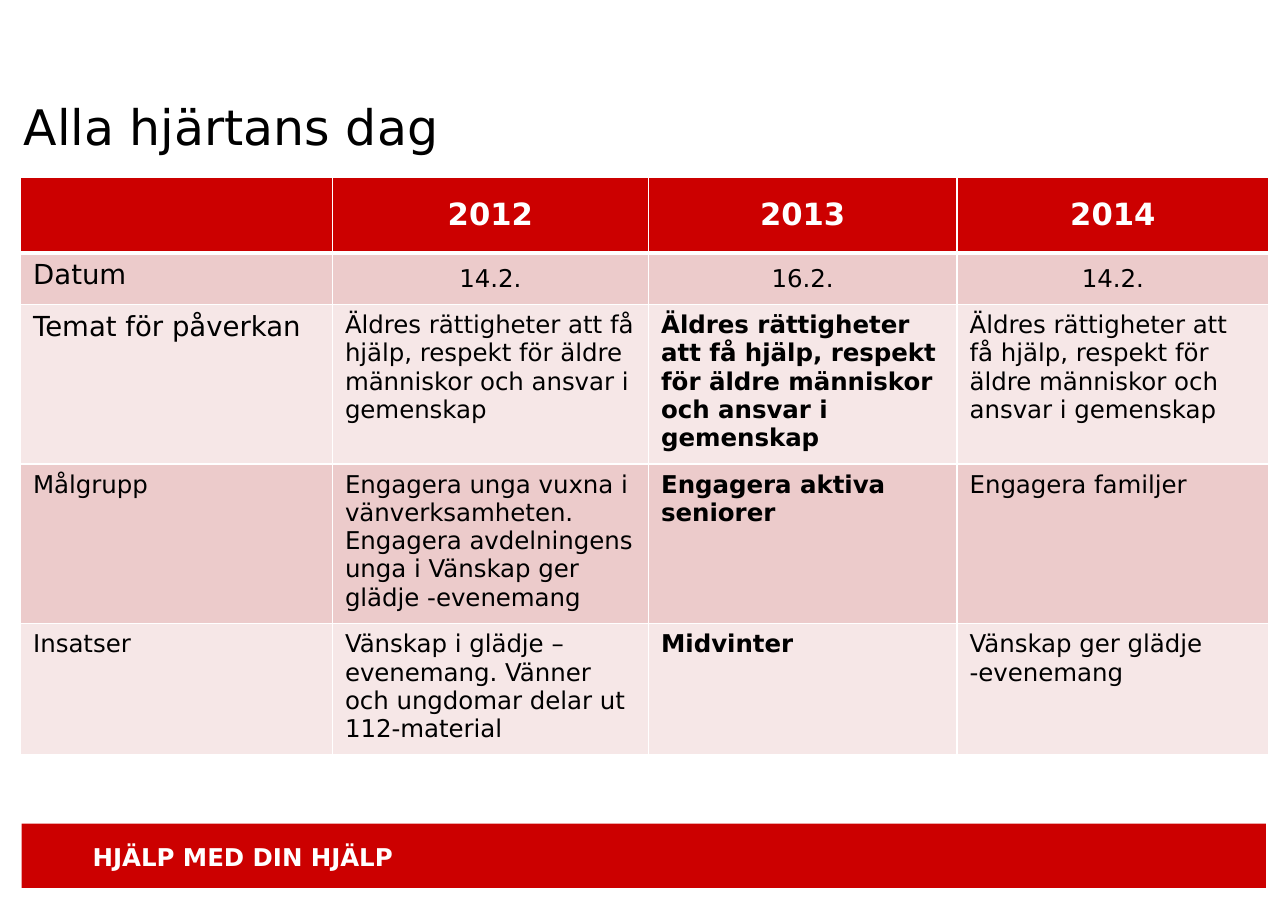
from lxml import etree
from pptx import Presentation
from pptx.dml.color import RGBColor
from pptx.enum.shapes import MSO_SHAPE
from pptx.enum.text import MSO_ANCHOR, PP_ALIGN
from pptx.oxml.ns import qn
from pptx.util import Pt

RECTANGLE = MSO_SHAPE.RECTANGLE
MIDDLE, TOP = MSO_ANCHOR.MIDDLE, MSO_ANCHOR.TOP
CENTER, LEFT = PP_ALIGN.CENTER, PP_ALIGN.LEFT

RED = RGBColor(0xCC, 0x00, 0x00)
ROSE = RGBColor(0xEC, 0xCB, 0xCB)
PALE_ROSE = RGBColor(0xF6, 0xE7, 0xE7)
WHITE = RGBColor(0xFF, 0xFF, 0xFF)
BLACK = RGBColor(0x00, 0x00, 0x00)
FONT = "DejaVu Sans"

COLUMN_WIDTHS = [203.8, 206.6, 201.6, 203.8]
ROW_HEIGHTS = [49, 33.8, 102.8, 100.5, 81.5]
THEME = "Äldres rättigheter att få hjälp, respekt för äldre människor och ansvar i gemenskap"
ROWS = [
    ["", "2012", "2013", "2014"],
    ["Datum", "14.2.", "16.2.", "14.2."],
    ["Temat för påverkan", THEME, THEME, THEME],
    ["Målgrupp",
     "Engagera unga vuxna i vänverksamheten. Engagera avdelningens unga i Vänskap ger glädje -evenemang",
     "Engagera aktiva seniorer", "Engagera familjer"],
    ["Insatser",
     "Vänskap i glädje –evenemang. Vänner och ungdomar delar ut 112-material",
     "Midvinter", "Vänskap ger glädje -evenemang"],
]
LARGE_LABELS = ("Datum", "Temat för påverkan")


def write(frame, text, size, color, bold=False, align=LEFT):
    paragraph = frame.paragraphs[0]
    paragraph.text = text
    paragraph.alignment = align
    font = paragraph.font
    font.name, font.size, font.bold = FONT, Pt(size), bold
    font.color.rgb = color


def add_borders(cell, top, bottom):
    """Draw white cell borders; top and bottom are line widths in points."""
    properties = cell._tc.get_or_add_tcPr()
    sides = [("a:lnL", 1), ("a:lnR", 1), ("a:lnT", top), ("a:lnB", bottom)]
    for position, (tag, width) in enumerate(sides):
        line = etree.Element(qn(tag), w=str(Pt(width)))
        fill = etree.SubElement(line, qn("a:solidFill"))
        etree.SubElement(fill, qn("a:srgbClr"), val=str(WHITE))
        properties.insert(position, line)


presentation = Presentation()
presentation.slide_width, presentation.slide_height = Pt(841.7), Pt(595.4)
slide = presentation.slides.add_slide(presentation.slide_layouts[6])

# Footer band
band = slide.shapes.add_shape(RECTANGLE, Pt(14.2), Pt(538.3), Pt(813), Pt(42))
band.shadow.inherit = False
band.fill.solid()
band.fill.fore_color.rgb = RED
band.line.fill.background()

slogan = slide.shapes.add_textbox(Pt(52.6), Pt(545.8), Pt(223.2), Pt(27.4)).text_frame
slogan.word_wrap = False
slogan.margin_left = slogan.margin_right = Pt(8)
slogan.margin_top = slogan.margin_bottom = Pt(4.2)
write(slogan, "HJÄLP MED DIN HJÄLP", 16, WHITE, bold=True)

# Title
title = slide.shapes.add_textbox(Pt(15.6), Pt(53.5), Pt(607), Pt(57.6)).text_frame
title.word_wrap = True
title.vertical_anchor = MIDDLE
title.margin_left = title.margin_right = title.margin_top = title.margin_bottom = 0
write(title, "Alla hjärtans dag", 32, BLACK)

# Campaign table
table = slide.shapes.add_table(
    len(ROWS), len(COLUMN_WIDTHS), Pt(13.4), Pt(116.2),
    Pt(sum(COLUMN_WIDTHS)), Pt(sum(ROW_HEIGHTS))).table
for column, width in zip(table.columns, COLUMN_WIDTHS):
    column.width = Pt(width)

for row_index, texts in enumerate(ROWS):
    table.rows[row_index].height = Pt(ROW_HEIGHTS[row_index])
    is_header = row_index == 0
    for column_index, text in enumerate(texts):
        cell = table.cell(row_index, column_index)
        cell.margin_left = cell.margin_right = Pt(8.3)
        cell.margin_top = cell.margin_bottom = Pt(4.2)
        cell.fill.solid()
        cell.fill.fore_color.rgb = RED if is_header else ROSE if row_index % 2 else PALE_ROSE
        add_borders(cell, top=3 if row_index == 1 else 1, bottom=3 if is_header else 1)

        is_centered = row_index < 2 and column_index > 0
        cell.vertical_anchor = MIDDLE if is_centered else TOP
        write(cell.text_frame, text,
              size=20 if is_header else 18 if text in LARGE_LABELS else 16,
              color=WHITE if is_header else BLACK,
              bold=is_header or (column_index == 2 and row_index > 1),
              align=CENTER if is_centered else LEFT)

presentation.save("out.pptx")
